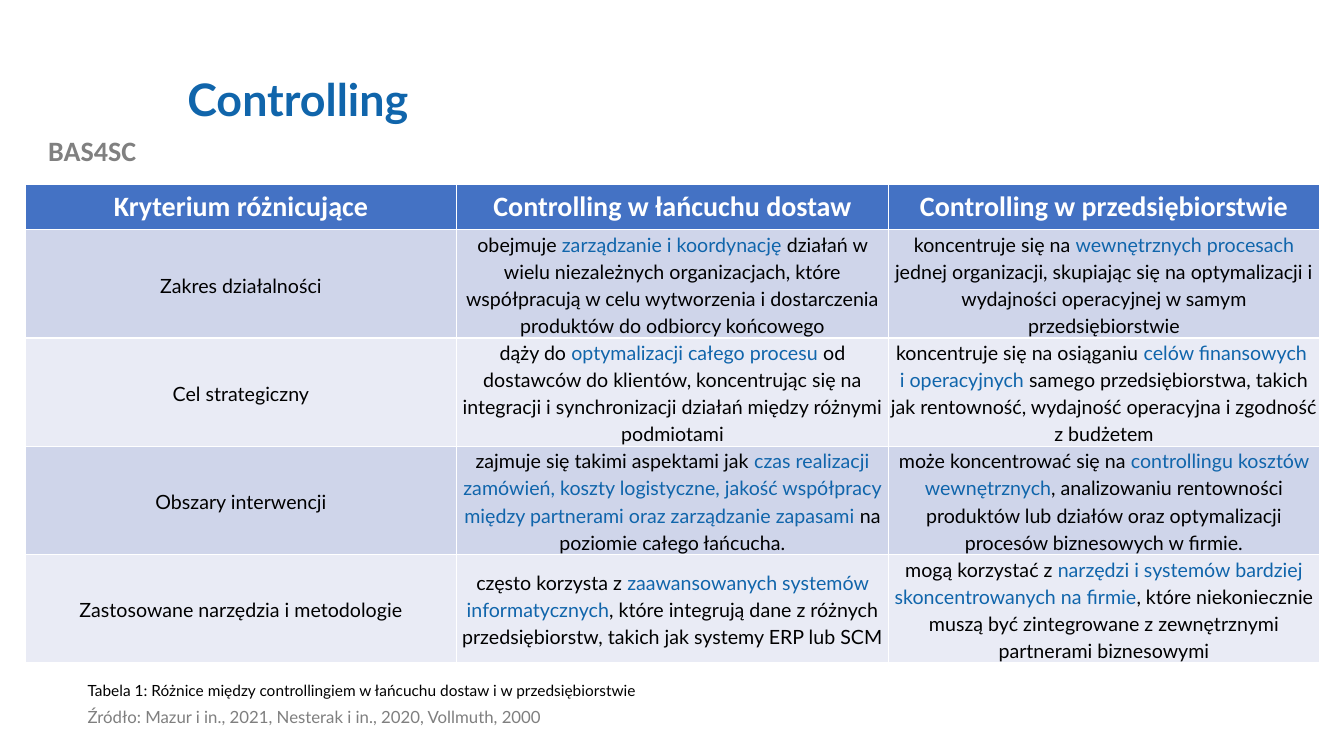
import pptx
import pptx.dml.color
import pptx.enum.text
import pptx.util

Inches, Pt = pptx.util.Inches, pptx.util.Pt
CENTER = pptx.enum.text.PP_ALIGN.CENTER
MIDDLE = pptx.enum.text.MSO_ANCHOR.MIDDLE

# Grid: table margins and the text column shared by caption and source
WIDTH, HEIGHT = 13.33, 7.5
TABLE_LEFT, TABLE_TOP, COLUMN = 0.25, 1.83, 4.28
NOTE_LEFT = 0.77
ROW_HEIGHTS = [0.45, 1, 1, 1, 0.74]

BLUE, BLACK, WHITE = "1065AB", "000000", "FFFFFF"
HEADER_FILL = "4472C4"
BAND_FILLS = ["CFD5EA", "E9EBF5"]

HEADINGS = ["Kryterium różnicujące", "Controlling w łańcuchu dostaw",
            "Controlling w przedsiębiorstwie"]

# Text between bars is highlighted in blue
CRITERIA = [
    ["Zakres działalności",
     "obejmuje |zarządzanie i koordynację |działań w wielu niezależnych organizacjach, "
     "które współpracują w celu wytworzenia i dostarczenia produktów do odbiorcy końcowego",
     "koncentruje się na |wewnętrznych procesach |jednej organizacji, skupiając się na "
     "optymalizacji i wydajności operacyjnej w samym przedsiębiorstwie"],
    ["Cel strategiczny",
     "dąży do |optymalizacji całego procesu |od dostawców do klientów, koncentrując się na "
     "integracji i synchronizacji działań między różnymi podmiotami",
     "koncentruje się na osiąganiu |celów finansowych \ni operacyjnych |samego "
     "przedsiębiorstwa, takich jak rentowność, wydajność operacyjna i zgodność z budżetem"],
    ["Obszary interwencji",
     "zajmuje się takimi aspektami jak| czas realizacji zamówień, koszty logistyczne, jakość "
     "współpracy między partnerami oraz zarządzanie zapasami |na poziomie całego łańcucha.",
     "może koncentrować się na |controllingu kosztów wewnętrznych|, analizowaniu rentowności "
     "produktów lub działów oraz optymalizacji procesów biznesowych w firmie."],
    ["Zastosowane narzędzia i metodologie",
     "często korzysta z |zaawansowanych systemów informatycznych|, które integrują dane z "
     "różnych przedsiębiorstw, takich jak systemy ERP lub SCM",
     "mogą korzystać z |narzędzi i systemów bardziej skoncentrowanych na firmie|, które "
     "niekoniecznie muszą być zintegrowane z zewnętrznymi partnerami biznesowymi"],
]


def rgb(color):
    return pptx.dml.color.RGBColor.from_string(color)


def style(run, size, font, color, bold=False):
    run.font.size = Pt(size)
    run.font.name = font
    run.font.bold = bold
    run.font.color.rgb = rgb(color)


def add_label(slide, box, text, size, color, font="Lato", bold=False,
              align=None, anchor=None, spacing=None):
    frame = slide.shapes.add_textbox(*map(Inches, box)).text_frame
    frame.word_wrap = True
    frame.vertical_anchor = anchor
    frame.text = text
    paragraph = frame.paragraphs[0]
    paragraph.alignment = align
    paragraph.line_spacing = spacing
    style(paragraph.runs[0], size, font, color, bold)


def fill_cell(cell, color):
    cell.fill.solid()
    cell.fill.fore_color.rgb = rgb(color)


def write_heading(cell, text):
    fill_cell(cell, HEADER_FILL)
    cell.text_frame.text = text
    paragraph = cell.text_frame.paragraphs[0]
    paragraph.alignment = CENTER
    style(paragraph.runs[0], 20, "Calibri", WHITE, True)


def write_description(cell, text, band):
    fill_cell(cell, band)
    cell.vertical_anchor = MIDDLE
    cell.margin_left = cell.margin_right = cell.margin_top = cell.margin_bottom = 0
    paragraph = cell.text_frame.paragraphs[0]
    paragraph.alignment = CENTER
    paragraph.line_spacing = 1.15
    paragraph.space_after = Pt(6)
    for part, phrase in enumerate(text.split("|")):
        for line, words in enumerate(phrase.split("\n")):
            if line:
                paragraph.add_line_break()
            run = paragraph.add_run()
            run.text = words
            style(run, 14, "Lato", BLUE if part % 2 else BLACK)


def add_comparison(slide):
    table = slide.shapes.add_table(
        len(ROW_HEIGHTS), len(HEADINGS), Inches(TABLE_LEFT), Inches(TABLE_TOP),
        Inches(COLUMN * len(HEADINGS)), Inches(sum(ROW_HEIGHTS))).table
    for row, height in zip(table.rows, ROW_HEIGHTS):
        row.height = Inches(height)
    for column, heading in enumerate(HEADINGS):
        write_heading(table.cell(0, column), heading)
    for row, descriptions in enumerate(CRITERIA):
        for column, text in enumerate(descriptions):
            write_description(table.cell(row + 1, column), text, BAND_FILLS[row % 2])


def main():
    deck = pptx.Presentation()
    deck.slide_width, deck.slide_height = Inches(WIDTH), Inches(HEIGHT)
    slide = deck.slides.add_slide(deck.slide_layouts[6])

    # Project tag and title
    add_label(slide, (0, 1.28, 1.83, 0.44), "BAS4SC", 20, "808080",
              font="Calibri", bold=True, align=CENTER)
    add_label(slide, (1.76, 0.4, 10.66, 1.22), "Controlling", 32, BLUE,
              bold=True, anchor=MIDDLE, spacing=0.9)

    # Comparison table with its source and caption
    add_label(slide, (NOTE_LEFT, 7, 5.78, 0.26),
              "Źródło: Mazur i in., 2021, Nesterak i in., 2020, Vollmuth, 2000",
              12, "7F7F7F", spacing=0.8)
    add_comparison(slide)
    add_label(slide, (NOTE_LEFT, 6.71, 10.91, 0.29),
              "Tabela 1: Różnice między controllingiem w łańcuchu dostaw i w przedsiębiorstwie",
              11, BLACK)

    deck.save("out.pptx")


if __name__ == "__main__":
    main()
